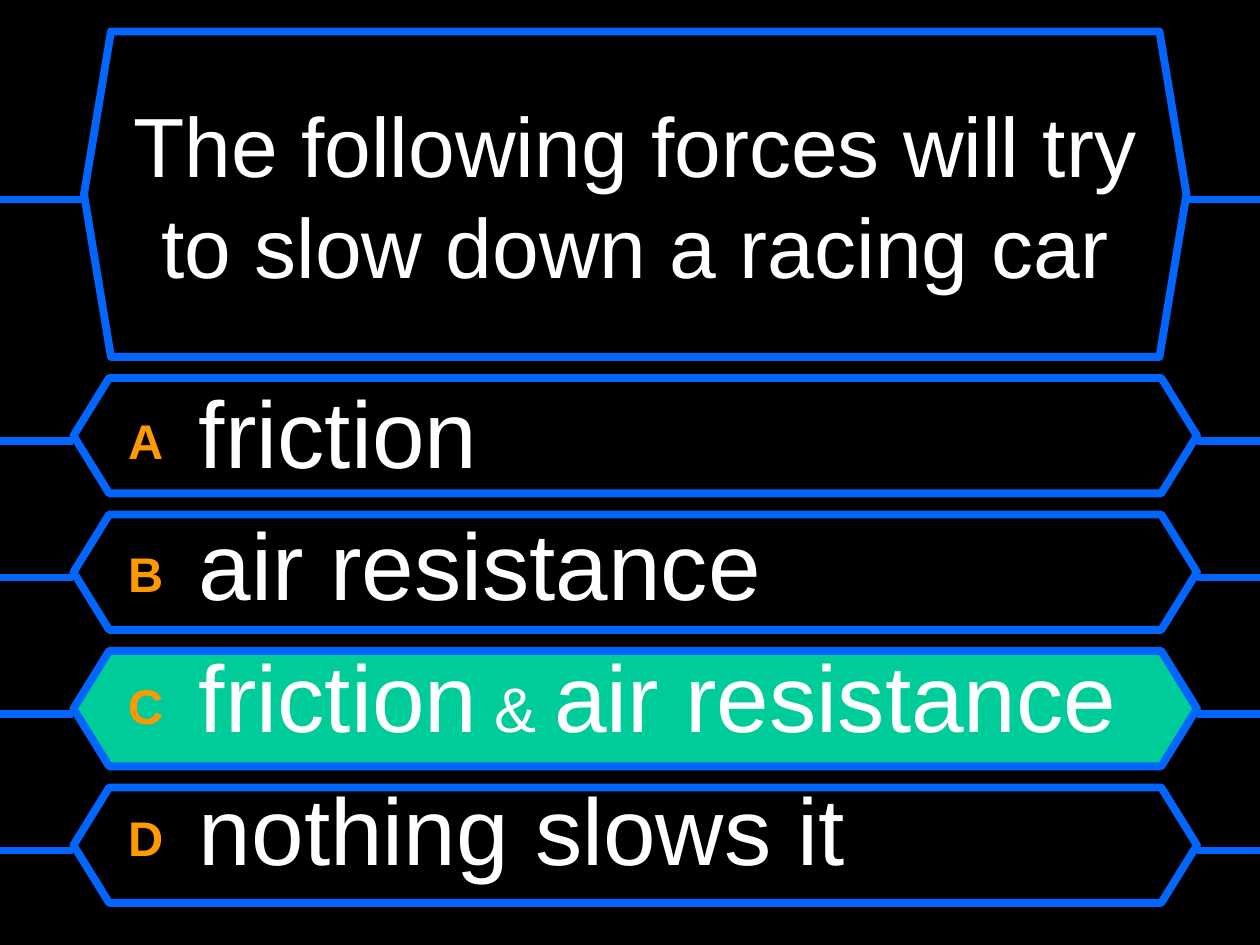
"""Build a quiz slide with one question and four answer bars."""
from dataclasses import dataclass

from lxml import etree
from pptx import Presentation
from pptx import util as u
from pptx.dml import color
from pptx.enum import shapes, text
from pptx.oxml import ns

PX = 9525
WIDE, HIGH = 960, 720
TOP, STEP = 288, 104
HANG = 54
EDGE = 4.5
FONT = "Arial"
HUES = {
    "black": "000000",
    "white": "FFFFFF",
    "blue": "0066FF",
    "green": "00CC99",
    "gold": "FF9900",
}


@dataclass
class Box:
    left: int
    top: int
    width: int
    height: int

    def emu(self) -> list[int]:
        return [n * PX for n in (self.left, self.top, self.width, self.height)]


@dataclass
class Bar:
    box: Box
    wire: int
    slant: float
    fill: str = "black"


@dataclass
class Answer:
    mark: str
    words: list[tuple[str, int]]
    fill: str = "black"


ASK = "The following forces will try to slow down a racing car"
ANSWERS = [
    Answer("A", [("friction", 54)]),
    Answer("B", [("air resistance", 54)]),
    Answer("C", [("friction", 54), (" & ", 36), ("air resistance", 54)], "green"),
    Answer("D", [("nothing slows it", 54)]),
]


def rgb(name: str) -> color.RGBColor:
    return color.RGBColor.from_string(HUES[name])


def put(para, words: str, size: int = 48, hue: str = "white",
        bold: bool = False, lift: int = 0) -> None:
    run = para.add_run()
    run.text = words
    font = run.font
    font.name, font.size, font.bold = FONT, u.Pt(size), bold
    font.color.rgb = rgb(hue)
    if lift:
        run._r.get_or_add_rPr().set("baseline", str(lift * 1000))


def edge(line) -> None:
    line.color.rgb = rgb("blue")
    line.width = u.Pt(EDGE)


def draw_bar(slide, bar: Bar) -> None:
    hexa = slide.shapes.add_shape(shapes.MSO_SHAPE.HEXAGON, *bar.box.emu())
    hexa.adjustments[0] = bar.slant
    hexa.shadow.inherit = False
    hexa.fill.solid()
    hexa.fill.fore_color.rgb = rgb(bar.fill)
    edge(hexa.line)


def draw_wire(slide, start: int, end: int, y: int) -> None:
    wire = slide.shapes.add_connector(
        shapes.MSO_CONNECTOR.STRAIGHT, start * PX, y * PX, end * PX, y * PX)
    edge(wire.line)
    etree.SubElement(wire._element.spPr, ns.qn("a:effectLst"))


def set_frame(slide, holder, box: Box, anchor):
    holder.left, holder.top, holder.width, holder.height = box.emu()
    slide.shapes._spTree.append(holder._element)
    frame = holder.text_frame
    frame.word_wrap = True
    frame.auto_size = text.MSO_AUTO_SIZE.NONE
    frame.vertical_anchor = anchor
    return frame


def fill_title(slide) -> None:
    frame = set_frame(slide, slide.shapes.title, Box(80, 40, 808, 216),
                      text.MSO_ANCHOR.MIDDLE)
    para = frame.paragraphs[0]
    para.alignment = text.PP_ALIGN.CENTER
    put(para, ASK)


def fill_body(slide) -> None:
    frame = set_frame(slide, slide.placeholders[1], Box(88, 280, 800, 416),
                      text.MSO_ANCHOR.TOP)
    for i, answer in enumerate(ANSWERS):
        para = frame.add_paragraph() if i else frame.paragraphs[0]
        props = para._p.get_or_add_pPr()
        props.set("marL", str(HANG * PX))
        props.set("indent", str(-HANG * PX))
        etree.SubElement(props, ns.qn("a:buNone"))
        put(para, answer.mark + "\t", hue="gold", bold=True, lift=10)
        for words, size in answer.words:
            put(para, words, size=size)


def main() -> None:
    deck = Presentation()
    deck.slide_width, deck.slide_height = WIDE * PX, HIGH * PX
    slide = deck.slides.add_slide(deck.slide_layouts[1])
    slide.background.fill.solid()
    slide.background.fill.fore_color.rgb = rgb("black")

    bars = [Bar(Box(64, 24, 840, 248), 152, 0.083)]
    for i, answer in enumerate(ANSWERS):
        top = TOP + i * STEP
        bars.append(Bar(Box(56, top, 856, 88), top + 48, 0.309, answer.fill))

    for bar in bars:
        draw_bar(slide, bar)
    fill_title(slide)
    fill_body(slide)
    for bar in bars:
        draw_wire(slide, bar.box.left, 0, bar.wire)
        draw_wire(slide, WIDE, bar.box.left + bar.box.width, bar.wire)
    deck.save("out.pptx")


if __name__ == "__main__":
    main()
